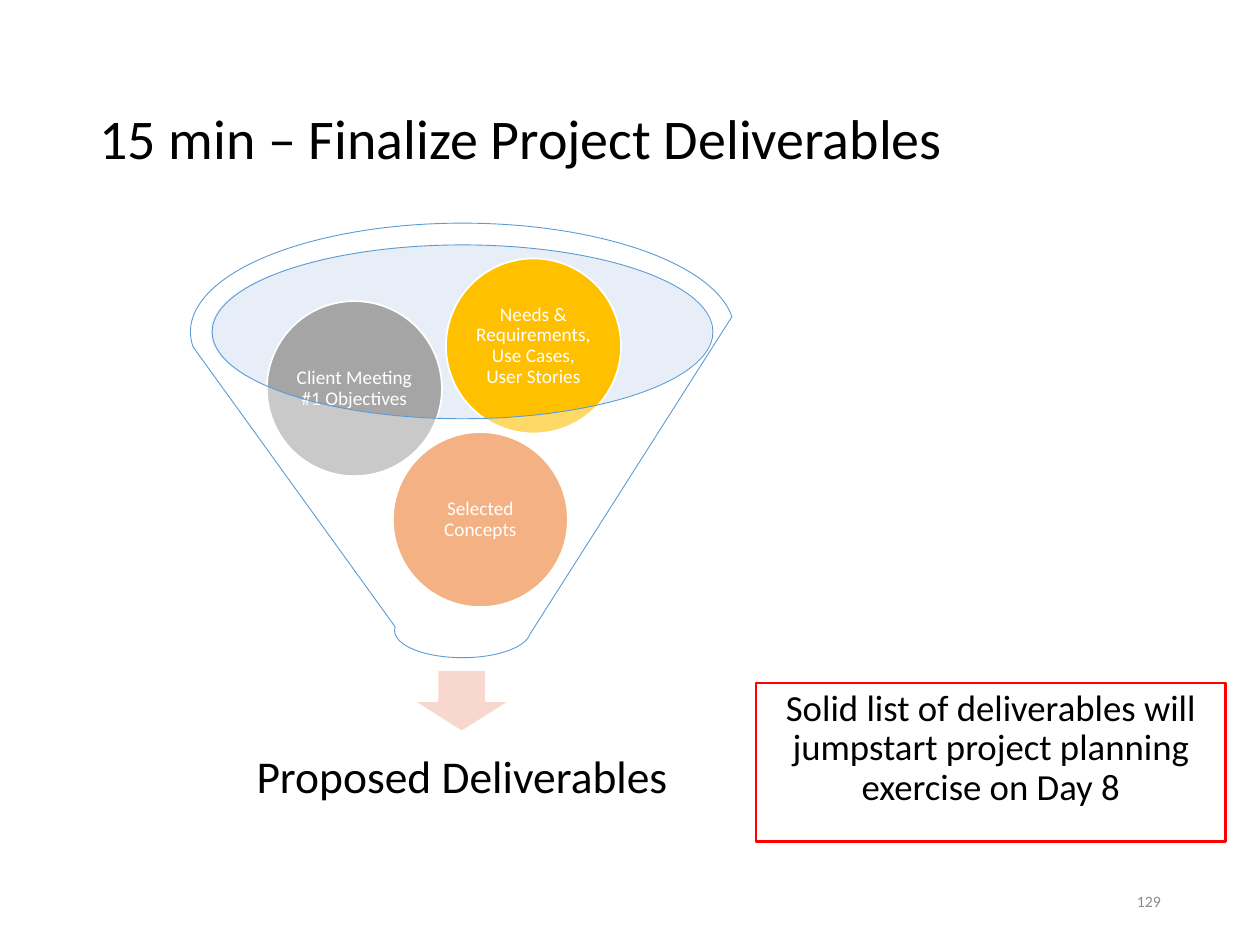
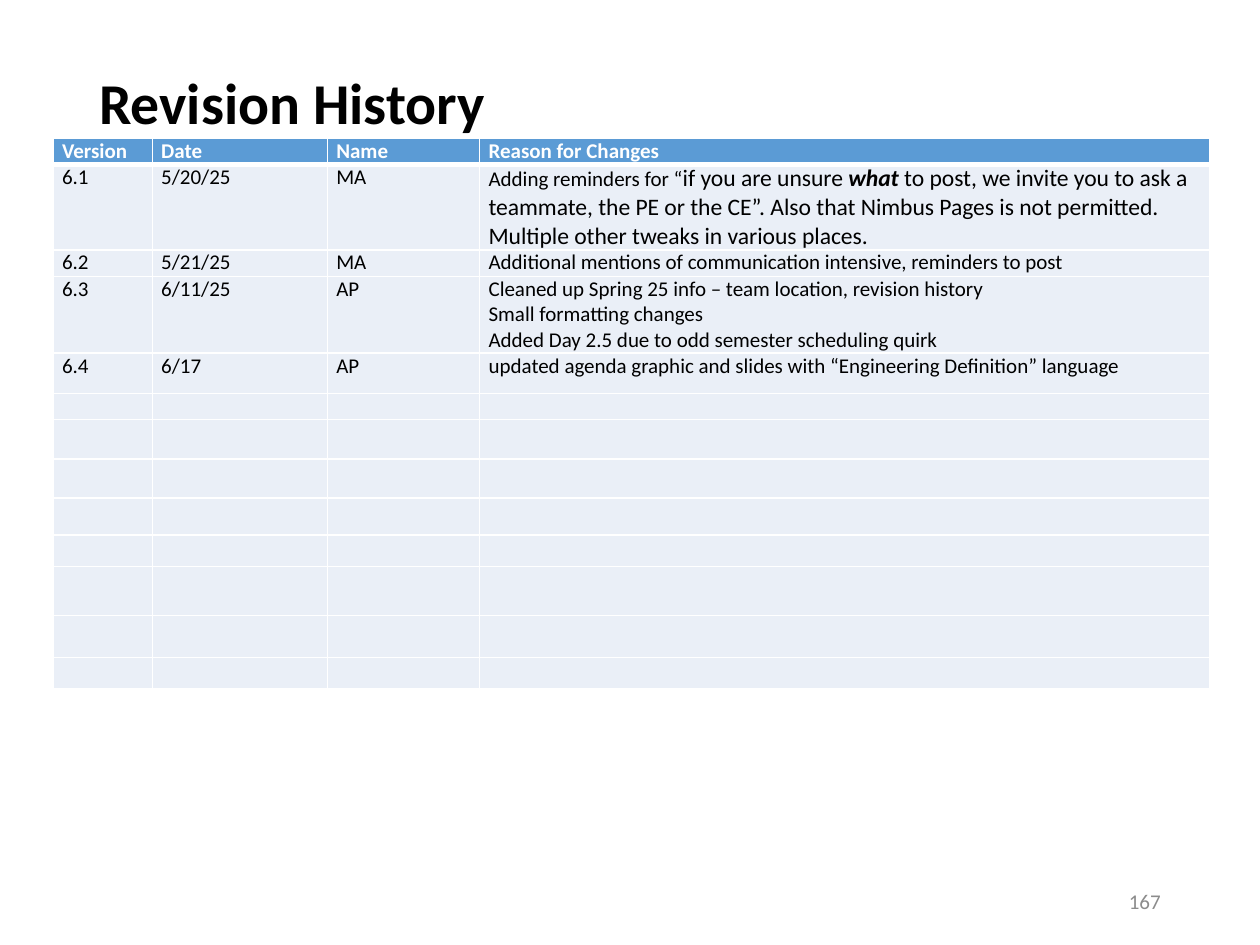
from dataclasses import dataclass

from lxml import etree
from pptx import Presentation
from pptx.dml.color import RGBColor
from pptx.enum.shapes import MSO_SHAPE
from pptx.enum.text import MSO_ANCHOR, PP_ALIGN
from pptx.oxml.ns import qn
from pptx.util import Cm, Pt

ELLIPSE, FUNNEL = MSO_SHAPE.OVAL, MSO_SHAPE.FUNNEL
DOWN_ARROW, RECTANGLE = MSO_SHAPE.DOWN_ARROW, MSO_SHAPE.RECTANGLE
LEFT, CENTER, RIGHT = PP_ALIGN.LEFT, PP_ALIGN.CENTER, PP_ALIGN.RIGHT
TOP, MIDDLE = MSO_ANCHOR.TOP, MSO_ANCHOR.MIDDLE

FONT = "Calibri"
BLACK = RGBColor(0x00, 0x00, 0x00)
WHITE = RGBColor(0xFF, 0xFF, 0xFF)
GRAY = RGBColor(0x8C, 0x8C, 0x8C)
RED = RGBColor(0xFF, 0x00, 0x00)
BLUE = RGBColor(0x5B, 0x9B, 0xD5)
RIM_BLUE = RGBColor(0xC4, 0xD5, 0xEB)
ROW_BLUE = RGBColor(0xEA, 0xEF, 0xF7)
ORANGE = RGBColor(0xED, 0x7D, 0x31)
SILVER = RGBColor(0xA5, 0xA5, 0xA5)
GOLD = RGBColor(0xFF, 0xC0, 0x00)
PALE_ORANGE = RGBColor(0xF8, 0xD7, 0xCE)

TIGHT = 0.9  # line spacing
CIRCLE_SIZE = 3.53
CELL_FONT_SIZE = 12


@dataclass(frozen=True)
class Area:
    """Position and size in centimetres."""
    left: float
    top: float
    width: float
    height: float

    def lengths(self) -> tuple:
        return Cm(self.left), Cm(self.top), Cm(self.width), Cm(self.height)


@dataclass(frozen=True)
class TextStyle:
    size: float
    color: RGBColor = BLACK
    bold: bool = False
    align: PP_ALIGN = LEFT
    anchor: MSO_ANCHOR = MIDDLE
    spacing: float = TIGHT
    side_inset: float = 0.25
    end_inset: float = 0.13


@dataclass(frozen=True)
class Input:
    """One circle dropped into the funnel."""
    text: str
    left: float
    top: float
    color: RGBColor


@dataclass(frozen=True)
class Span:
    text: str
    size: float = CELL_FONT_SIZE
    bold: bool = False
    italic: bool = False


@dataclass(frozen=True)
class Revision:
    """One table row; each reason is a paragraph made of spans."""
    height: float
    version: str = ""
    date: str = ""
    name: str = ""
    reasons: tuple = ((),)


TITLE_AREA = Area(1.75, 1.02, 21.9, 3.68)
RAISED_TITLE_AREA = Area(1.75, 1.02, 21.9, 2.24)
NUMBER_AREA = Area(17.93, 17.65, 5.72, 1.02)

NOTE_STYLE = TextStyle(21, align=CENTER, anchor=TOP)
RESULT_STYLE = TextStyle(26, align=CENTER, side_inset=0.5, end_inset=0.5)
CIRCLE_STYLE = TextStyle(11, WHITE, align=CENTER, side_inset=0.04, end_inset=0.04)

INPUTS = (
    Input("Selected Concepts", 7.92, 8.71, ORANGE),
    Input("Client Meeting #1 Objectives", 5.38, 6.07, SILVER),
    Input("Needs & Requirements, Use Cases, User Stories", 8.99, 5.21, GOLD),
)

COLUMN_WIDTHS = (2.0, 3.53, 3.07, 14.71)
HEADINGS = ("Version", "Date", "Name", "Reason for Changes")
HEADER_HEIGHT = 0.52
EMPTY_ROW_HEIGHTS = (0.53, 0.79, 0.79, 0.74, 0.64, 0.99, 0.84, 0.64)
REVISIONS = (
    Revision(1.73, "6.1", "5/20/25", "MA", ((
        Span("Adding reminders for “"),
        Span("if you are unsure ", 13.5),
        Span("what", 13.5, bold=True, italic=True),
        Span(" to post, we invite you to ask a teammate, the PE or the CE”. "
             "Also that Nimbus Pages is not permitted. "
             "Multiple other tweaks in various places.", 13.5),
    ),)),
    Revision(0.53, "6.2", "5/21/25", "MA", (
        (Span("Additional mentions of communication intensive, reminders to post"),),
    )),
    Revision(1.55, "6.3", "6/11/25", "AP", (
        (Span("Cleaned up Spring 25 info – team location, revision history"),),
        (Span("Small formatting changes"),),
        (Span("Added Day 2.5 due to odd semester scheduling quirk"),),
    )),
    Revision(0.81, "6.4", "6/17", "AP", (
        (Span("updated agenda graphic and slides with “Engineering Definition” language"),),
    )),
) + tuple(Revision(height) for height in EMPTY_ROW_HEIGHTS)


def write(box, text: str, style: TextStyle) -> None:
    frame = box.text_frame
    frame.word_wrap = True
    frame.vertical_anchor = style.anchor
    frame.margin_left = frame.margin_right = Cm(style.side_inset)
    frame.margin_top = frame.margin_bottom = Cm(style.end_inset)
    frame.text = text
    para = frame.paragraphs[0]
    para.alignment = style.align
    para.line_spacing = style.spacing
    font = para.runs[0].font
    font.name, font.size, font.bold = FONT, Pt(style.size), style.bold
    font.color.rgb = style.color


def add_text(page, area: Area, text: str, style: TextStyle) -> None:
    write(page.shapes.add_textbox(*area.lengths()), text, style)


def add_figure(page, kind, area: Area, fill: RGBColor | None = None,
               line: RGBColor | None = None, weight: float = 1,
               opacity: int = 100):
    figure = page.shapes.add_shape(kind, *area.lengths())
    figure.shadow.inherit = False
    if fill is None:
        figure.fill.background()
    else:
        figure.fill.solid()
        figure.fill.fore_color.rgb = fill
    if opacity < 100:
        color = figure.fill._xPr.find(qn("a:solidFill"))[0]
        etree.SubElement(color, qn("a:alpha"), val=str(opacity * 1000))
    if line is None:
        figure.line.fill.background()
    else:
        figure.line.color.rgb = line
        figure.line.width = Pt(weight)
    return figure


def add_page(deck, title: str, title_area: Area, title_style: TextStyle,
             number: str, number_size: float):
    page = deck.slides.add_slide(deck.slide_layouts[6])
    add_text(page, title_area, title, title_style)
    add_text(page, NUMBER_AREA, number,
             TextStyle(number_size, GRAY, align=RIGHT, spacing=1.0))
    return page


def set_borders(cell, bottom_weight: float) -> None:
    properties = cell._tc.get_or_add_tcPr()
    for side in "LRTB":
        weight = bottom_weight if side == "B" else 1
        border = etree.SubElement(properties, qn(f"a:ln{side}"), w=str(Pt(weight)))
        fill = etree.SubElement(border, qn("a:solidFill"))
        etree.SubElement(fill, qn("a:srgbClr"), val=str(WHITE))


def fill_cell(cell, paragraphs: tuple, fill: RGBColor, color: RGBColor,
              bottom_weight: float = 1) -> None:
    set_borders(cell, bottom_weight)
    cell.fill.solid()
    cell.fill.fore_color.rgb = fill
    cell.margin_left = cell.margin_right = Cm(0.18)
    cell.margin_top = cell.margin_bottom = 0
    frame = cell.text_frame
    for index, spans in enumerate(paragraphs):
        para = frame.add_paragraph() if index else frame.paragraphs[0]
        for span in spans:
            run = para.add_run()
            run.text = span.text
            font = run.font
            font.name, font.size = FONT, Pt(span.size)
            font.bold, font.italic = span.bold, span.italic
            font.color.rgb = color
        # Keeps empty rows from growing to the default text size
        para._p.get_or_add_endParaRPr().set("sz", str(CELL_FONT_SIZE * 100))


def build_deliverables(deck) -> None:
    page = add_page(deck, "15 min – Finalize Project Deliverables", TITLE_AREA,
                    TextStyle(32), "129", 9)
    note = add_figure(page, RECTANGLE, Area(15.24, 13.77, 9.47, 3.2),
                      line=RED, weight=1.5)
    write(note, "Solid list of deliverables will jumpstart project planning "
                "exercise on Day 8", NOTE_STYLE)

    # Funnel opening, outlet arrow and result
    add_figure(page, ELLIPSE, Area(4.24, 4.93, 10.11, 3.51), RIM_BLUE, opacity=40)
    add_figure(page, DOWN_ARROW, Area(8.33, 13.51, 1.96, 1.24), PALE_ORANGE, WHITE)
    add_text(page, Area(4.62, 14.53, 9.4, 2.36), "Proposed Deliverables", RESULT_STYLE)

    # Inputs, seen through the translucent funnel
    for item in INPUTS:
        area = Area(item.left, item.top, CIRCLE_SIZE, CIRCLE_SIZE)
        circle = add_figure(page, ELLIPSE, area, item.color, WHITE)
        write(circle, item.text, CIRCLE_STYLE)
    add_figure(page, FUNNEL, Area(3.84, 4.5, 10.97, 8.76), WHITE, BLUE, 0.5, 40)


def build_history(deck) -> None:
    page = add_page(deck, "Revision History", RAISED_TITLE_AREA,
                    TextStyle(33, bold=True), "167", 12)
    heights = [HEADER_HEIGHT] + [revision.height for revision in REVISIONS]
    area = Area(1.07, 2.79, sum(COLUMN_WIDTHS), sum(heights))
    table = page.shapes.add_table(len(heights), len(COLUMN_WIDTHS),
                                  *area.lengths()).table
    table.horz_banding = False
    for column, width in zip(table.columns, COLUMN_WIDTHS):
        column.width = Cm(width)
    for row, height in zip(table.rows, heights):
        row.height = Cm(height)

    # Header row, then one row per revision
    for column, heading in enumerate(HEADINGS):
        fill_cell(table.cell(0, column), ((Span(heading, bold=True),),),
                  BLUE, WHITE, bottom_weight=3)
    for row, revision in enumerate(REVISIONS, start=1):
        labels = (revision.version, revision.date, revision.name)
        contents = [((Span(label),) if label else (),) for label in labels]
        for column, paragraphs in enumerate(contents + [revision.reasons]):
            fill_cell(table.cell(row, column), paragraphs, ROW_BLUE, BLACK)


def main() -> None:
    deck = Presentation()
    deck.slide_width, deck.slide_height = Cm(25.4), Cm(19.05)
    build_deliverables(deck)
    build_history(deck)
    deck.save("out.pptx")


if __name__ == "__main__":
    main()
